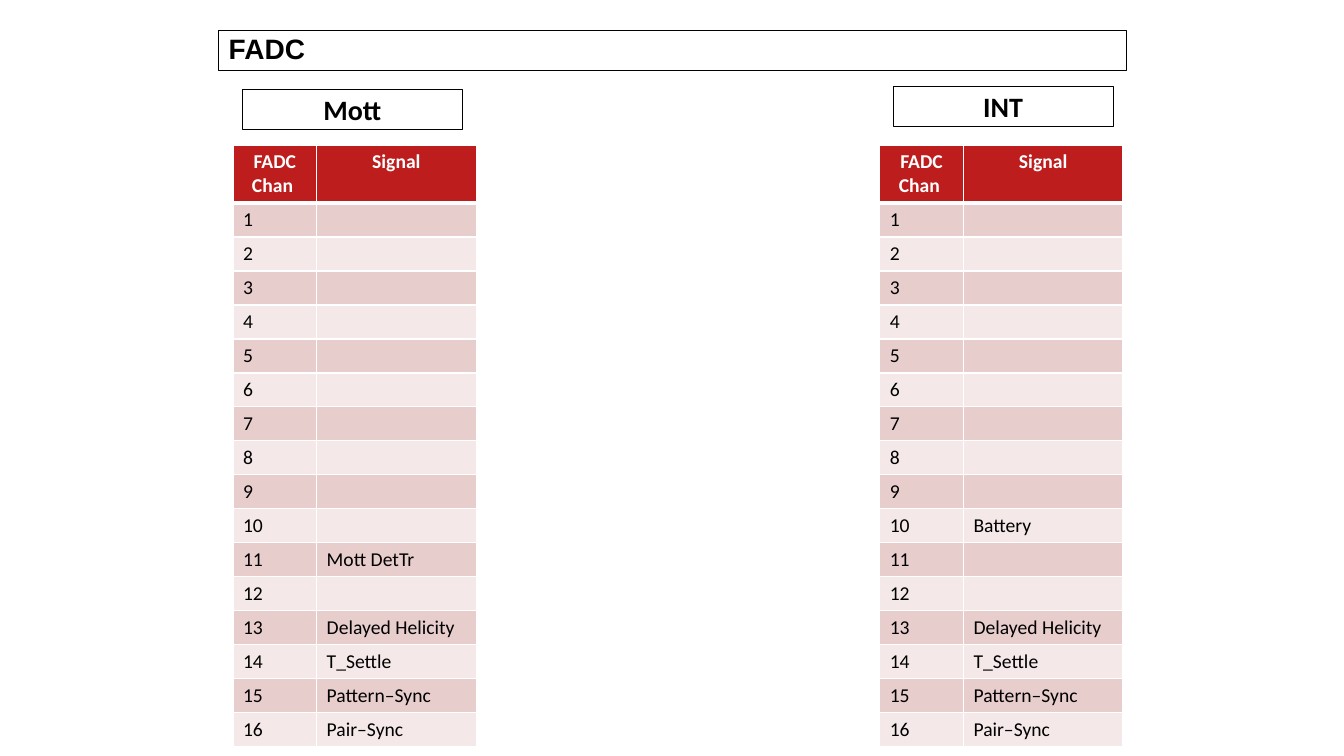
"""Build the FADC channel slide with one signal table per crate."""
from lxml import etree
from pptx import Presentation, util as u
from pptx.dml.color import RGBColor
from pptx.enum import shapes, text
from pptx.oxml.ns import qn

COLORS = {"ink": "000000", "white": "FFFFFF", "header": "BE1D1D",
          "odd": "E8CDCD", "even": "F4E8E8"}
TITLE = "FADC"
HEADERS = ("FADC Chan ", "Signal")
CHANNELS = 16
SHARED = {13: "Delayed Helicity", 14: "T_Settle", 15: "Pattern–Sync", 16: "Pair–Sync"}
CRATES = [
    {"name": "Mott", "label": (6.1, 2.26), "table_x": 5.87, "signals": {11: "Mott DetTr"}},
    {"name": "INT", "label": (22.5, 2.18), "table_x": 22.17, "signals": {10: "Battery"}},
]
COL_WIDTHS = (2.11, 4.02)
TABLE_Y, TABLE_H, ROW_H = 3.66, 14.99, 0.66
LABEL_W, BOX_H = 5.56, 1.0


def rgb(name):
    return RGBColor.from_string(COLORS[name])


def write(tf, words, size, font="Calibri", color="ink", bold=False, align=text.PP_ALIGN.LEFT):
    p = tf.paragraphs[0]
    p.alignment = align
    r = p.add_run()
    r.text = words
    r.font.size, r.font.name, r.font.bold = u.Pt(size), font, bold
    r.font.color.rgb = rgb(color)
    return p


def frame(sp):
    sp.fill.background()
    sp.line.color.rgb = rgb("ink")
    sp.line.width = u.Pt(0.25)
    sp.text_frame.word_wrap = True
    sp.text_frame.auto_size = text.MSO_AUTO_SIZE.NONE
    sp.text_frame.vertical_anchor = text.MSO_ANCHOR.MIDDLE


def border(cell, widths):
    tc_pr = cell._tc.get_or_add_tcPr()
    for side, width in zip("LRTB", widths):
        ln = etree.SubElement(tc_pr, qn("a:ln" + side), w=str(u.Pt(width)))
        fill = etree.SubElement(ln, qn("a:solidFill"))
        etree.SubElement(fill, qn("a:srgbClr"), val=COLORS["white"])


def add_title(s):
    sp = s.shapes.title
    sp.left, sp.top, sp.width, sp.height = u.Cm(5.51), u.Cm(0.76), u.Cm(22.86), u.Cm(BOX_H)
    frame(sp)
    write(sp.text_frame, TITLE, 20, "Arial", bold=True).line_spacing = 0.9


def add_signals(s, crate):
    signals = {**SHARED, **crate["signals"]}
    rows = [HEADERS] + [(str(n), signals.get(n, "")) for n in range(1, CHANNELS + 1)]
    gf = s.shapes.add_table(len(rows), len(HEADERS), u.Cm(crate["table_x"]), u.Cm(TABLE_Y),
                            u.Cm(sum(COL_WIDTHS)), u.Cm(TABLE_H))
    table = gf.table
    for col, width in zip(table.columns, COL_WIDTHS):
        col.width = u.Cm(width)
    for i, row in enumerate(rows):
        table.rows[i].height = u.Cm(ROW_H)
        for j, words in enumerate(row):
            cell = table.cell(i, j)
            border(cell, (1, 1, 3 if i == 1 else 1, 3 if i == 0 else 1))
            cell.fill.solid()
            cell.fill.fore_color.rgb = rgb("header" if i == 0 else "odd" if i % 2 else "even")
            if i == 0:
                write(cell.text_frame, words, 14, color="white", bold=True,
                      align=text.PP_ALIGN.CENTER)
            elif words:
                write(cell.text_frame, words, 14)
            else:
                etree.SubElement(cell.text_frame.paragraphs[0]._p, qn("a:endParaRPr"), sz="1400")
    gf.height = u.Cm(TABLE_H)


def add_label(s, crate):
    x, y = crate["label"]
    sp = s.shapes.add_shape(shapes.MSO_SHAPE.RECTANGLE, u.Cm(x), u.Cm(y),
                            u.Cm(LABEL_W), u.Cm(BOX_H))
    sp.shadow.inherit = False
    frame(sp)
    write(sp.text_frame, crate["name"], 20, bold=True, align=text.PP_ALIGN.CENTER)


def main():
    prs = Presentation()
    prs.slide_width, prs.slide_height = u.Cm(33.87), u.Cm(19.05)
    s = prs.slides.add_slide(prs.slide_layouts[5])
    add_title(s)
    for crate in CRATES:
        add_signals(s, crate)
    for crate in CRATES:
        add_label(s, crate)
    prs.save("out.pptx")


if __name__ == "__main__":
    main()
